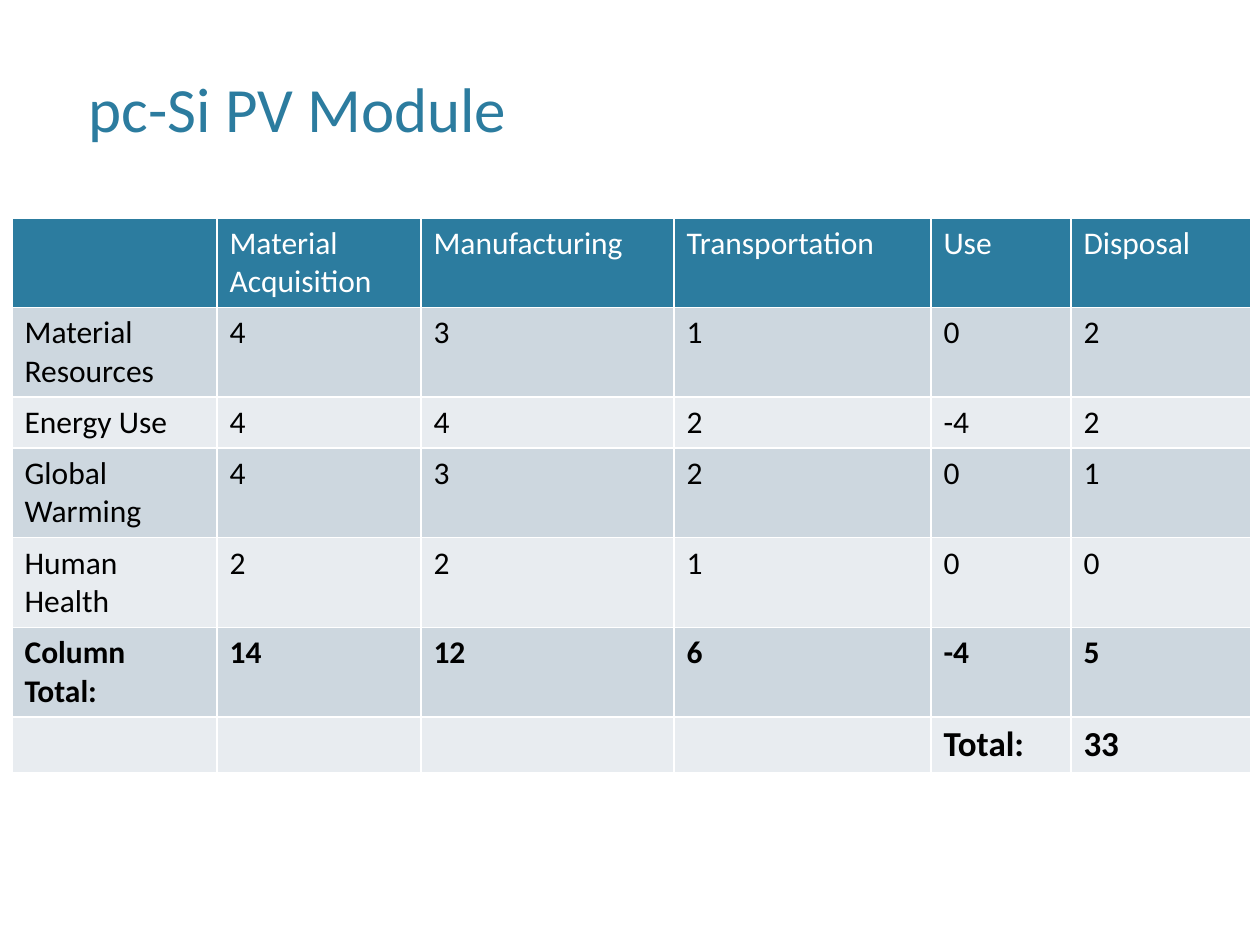
import pptx
import pptx.dml.color
import pptx.enum.text
import pptx.oxml
import pptx.oxml.ns
import pptx.util

PX = 914400 // 126


def color(hex_value):
    return pptx.dml.color.RGBColor.from_string(hex_value)


class ImpactSlide:
    font_name = "Calibri"
    accent = "2C7C9F"
    bands = ("CDD7DF", "E8ECF0")
    ink = "000000"
    white = "FFFFFF"

    def __init__(self, slide):
        self.slide = slide

    def style(self, paragraph, size, hex_value, bold=False):
        paragraph.font.name = self.font_name
        paragraph.font.size = pptx.util.Pt(size)
        paragraph.font.bold = bold
        paragraph.font.color.rgb = color(hex_value)

    def title(self, text, left, top, width, height):
        heading = self.slide.shapes.title
        heading.left, heading.top = left * PX, top * PX
        heading.width, heading.height = width * PX, height * PX
        frame = heading.text_frame
        frame.text = text
        frame.vertical_anchor = pptx.enum.text.MSO_ANCHOR.MIDDLE
        paragraph = frame.paragraphs[0]
        paragraph.alignment = pptx.enum.text.PP_ALIGN.LEFT
        self.style(paragraph, 36, self.accent)

    def border(self, cell):
        properties = cell._tc.get_or_add_tcPr()
        for position, side in enumerate(("lnL", "lnR", "lnT", "lnB")):
            properties.insert(position, pptx.oxml.parse_xml(
                f'<a:{side} {pptx.oxml.ns.nsdecls("a")} w="12700"><a:solidFill>'
                f'<a:srgbClr val="{self.white}"/></a:solidFill></a:{side}>'))

    def cell(self, cell, text, fill, size, ink, bold):
        cell.text = text
        cell.fill.solid()
        cell.fill.fore_color.rgb = color(fill)
        self.border(cell)
        self.style(cell.text_frame.paragraphs[0], size, ink, bold)

    def table(self, rows, left, top, column_widths, row_height):
        scores = self.slide.shapes.add_table(
            len(rows), len(column_widths), left * PX, top * PX,
            sum(column_widths) * PX, len(rows) * row_height * PX).table
        scores.first_row = False
        scores.horz_banding = False
        for column, width in zip(scores.columns, column_widths):
            column.width = width * PX
        for index, values in enumerate(rows):
            scores.rows[index].height = row_height * PX
            header = index == 0
            fill = self.accent if header else self.bands[(index - 1) % 2]
            ink = self.white if header else self.ink
            bold = index >= len(rows) - 2
            for column, text in enumerate(values):
                size = 20 if text and index == len(rows) - 1 else 18
                self.cell(scores.cell(index, column), text, fill, size, ink, bold)


def main():
    presentation = pptx.Presentation()
    presentation.slide_width = 1260 * PX
    presentation.slide_height = 945 * PX
    layout = presentation.slide_layouts.get_by_name("Title Only")
    impact = ImpactSlide(presentation.slides.add_slide(layout))
    impact.title("pc-Si PV Module", 76, 15, 1109, 184)

    stages = ["Material Acquisition", "Manufacturing", "Transportation", "Use", "Disposal"]
    impacts = {
        "Material Resources": [4, 3, 1, 0, 2],
        "Energy Use": [4, 4, 2, -4, 2],
        "Global Warming": [4, 3, 2, 0, 1],
        "Human Health": [2, 2, 1, 0, 0],
    }
    totals = [sum(column) for column in zip(*impacts.values())]
    rows = [["", *stages]]
    rows += [[name, *map(str, values)] for name, values in impacts.items()]
    rows.append(["Column Total:", *map(str, totals)])
    rows.append(["", "", "", "", "Total:", str(sum(totals))])
    impact.table(rows, 12, 218, [205, 204, 253, 257, 140, 180], 51)
    presentation.save("out.pptx")


if __name__ == "__main__":
    main()
